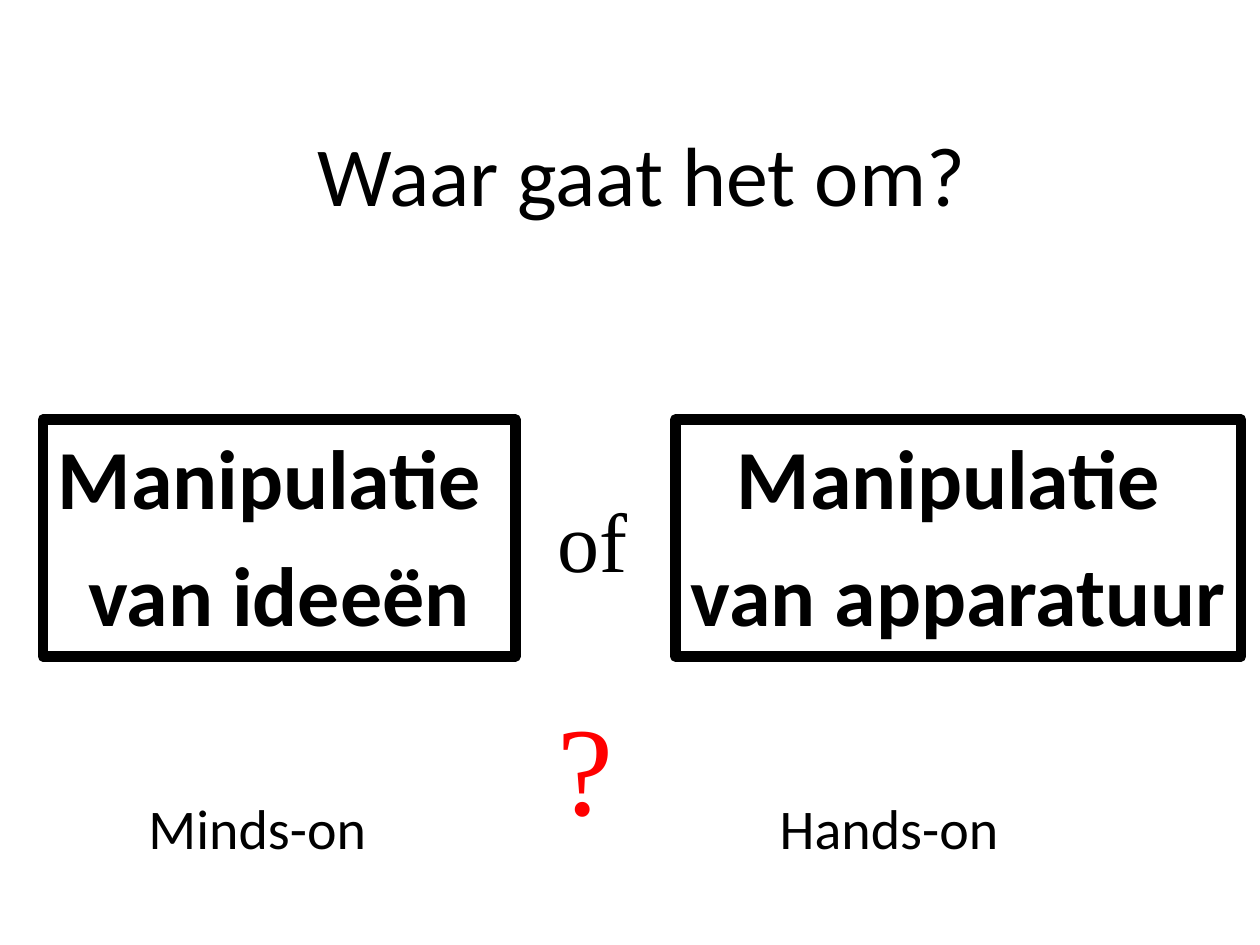
from dataclasses import dataclass

from pptx import Presentation
from pptx.dml.color import RGBColor
from pptx.enum.shapes import MSO_SHAPE
from pptx.enum.text import MSO_ANCHOR, PP_ALIGN
from pptx.util import Inches, Pt

RECTANGLE = MSO_SHAPE.RECTANGLE
TOP = MSO_ANCHOR.TOP
CENTER = PP_ALIGN.CENTER

BLACK = RGBColor(0x00, 0x00, 0x00)
RED = RGBColor(0xFF, 0x00, 0x00)
SANS = "Calibri"
SERIF = "Times New Roman"

BOX_TOP, BOX_HEIGHT = 3.33, 1.88
MIDDLE_LEFT = 4.33
CAPTION_TOP, CAPTION_HEIGHT = 6.25, 0.64


@dataclass
class Label:
    text: str
    left: float
    top: float
    width: float
    height: float
    size: int
    font: str = SANS
    color: RGBColor = BLACK


@dataclass
class ChoiceBox:
    lines: tuple[str, ...]
    left: float
    width: float


LABELS = [
    Label("Waar gaat het om?", 2.42, 0.92, 5.4, 0.91, 48),
    Label("of", MIDDLE_LEFT, 3.83, 0.76, 0.9, 48, SERIF),
    Label("?", MIDDLE_LEFT, 5.42, 0.65, 1.3, 72, SERIF, RED),
    Label("Minds-on", 1.08, CAPTION_TOP, 2.01, CAPTION_HEIGHT, 32),
    Label("Hands-on", 6.09, CAPTION_TOP, 2.1, CAPTION_HEIGHT, 32),
]
BOXES = [
    ChoiceBox(("Manipulatie ", "van ideeën"), 0.34, 3.75),
    ChoiceBox(("Manipulatie ", "van apparatuur"), 5.36, 4.49),
]


def add_run(paragraph, text: str, color: RGBColor, **font_format) -> None:
    run = paragraph.add_run()
    run.text = text
    run.font.color.rgb = color
    for name, value in font_format.items():
        setattr(run.font, name, value)


def draw_label(slide, label: Label) -> None:
    shape = slide.shapes.add_textbox(
        Inches(label.left), Inches(label.top), Inches(label.width), Inches(label.height)
    )
    frame = shape.text_frame
    frame.word_wrap = False
    add_run(frame.paragraphs[0], label.text, label.color,
            name=label.font, size=Pt(label.size))


def draw_choice_box(slide, box: ChoiceBox) -> None:
    shape = slide.shapes.add_shape(
        RECTANGLE, Inches(box.left), Inches(BOX_TOP), Inches(box.width), Inches(BOX_HEIGHT)
    )
    shape.shadow.inherit = False
    shape.fill.background()
    shape.line.color.rgb = BLACK
    shape.line.width = Pt(6)
    frame = shape.text_frame
    frame.word_wrap = False
    frame.vertical_anchor = TOP
    for index, line in enumerate(box.lines):
        paragraph = frame.add_paragraph() if index else frame.paragraphs[0]
        paragraph.alignment = CENTER
        paragraph.space_before = Pt(9)
        add_run(paragraph, line, BLACK, name=SANS, size=Pt(48), bold=True)


def main() -> None:
    presentation = Presentation()
    presentation.slide_width = Inches(10)
    presentation.slide_height = Inches(7.5)
    slide = presentation.slides.add_slide(presentation.slide_layouts[6])
    title, *other_labels = LABELS
    draw_label(slide, title)
    for box in BOXES:
        draw_choice_box(slide, box)
    for label in other_labels:
        draw_label(slide, label)
    presentation.save("out.pptx")


if __name__ == "__main__":
    main()
